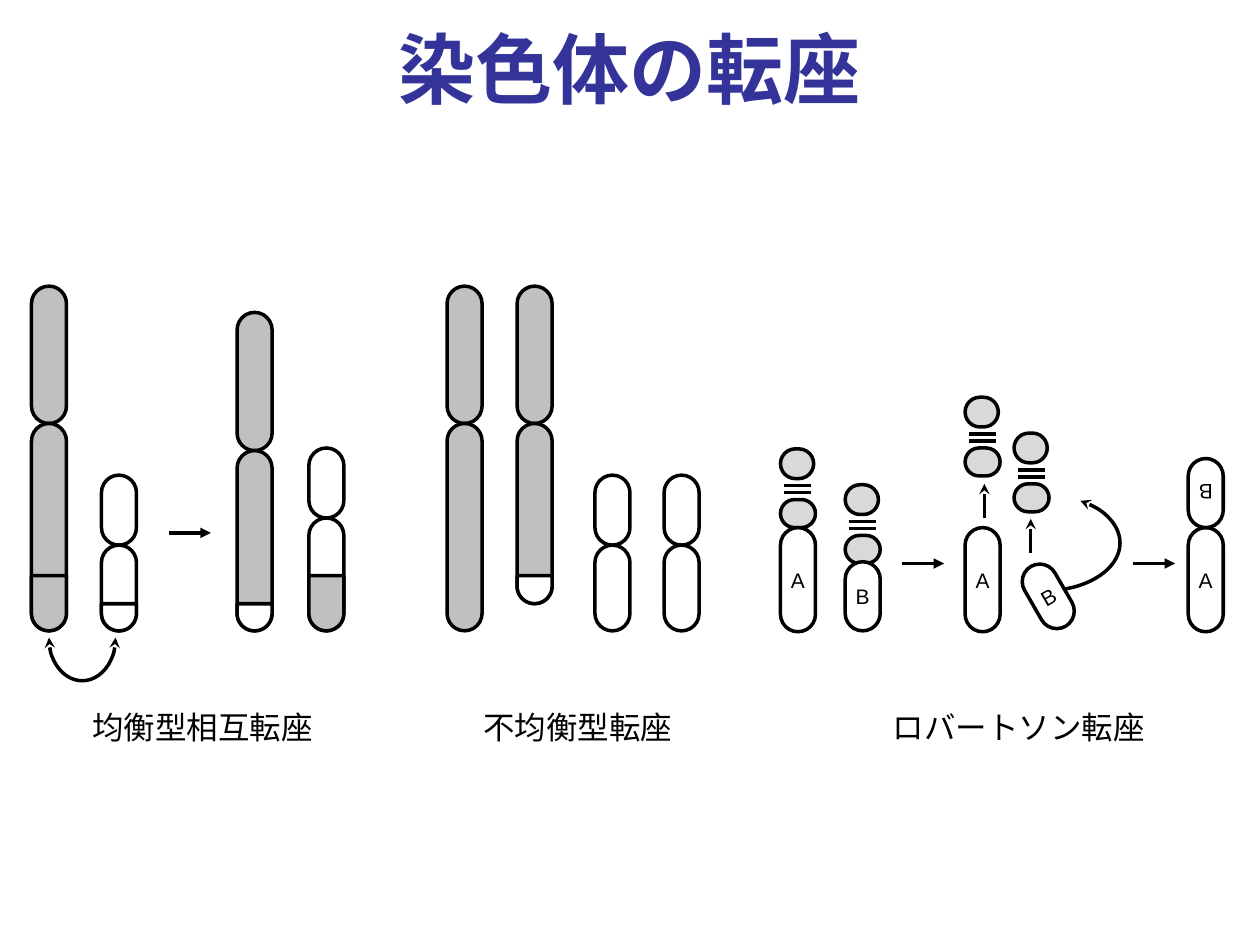
"""Build a slide that explains three kinds of chromosome translocation."""
from math import cos, pi, sin

from lxml import etree
from pptx import Presentation
from pptx.dml.color import RGBColor
from pptx.enum.shapes import MSO_CONNECTOR, MSO_SHAPE
from pptx.enum.text import MSO_ANCHOR, PP_ALIGN
from pptx.oxml.ns import qn
from pptx.util import Pt

STRAIGHT = MSO_CONNECTOR.STRAIGHT
PILL, ARC = MSO_SHAPE.ROUNDED_RECTANGLE, MSO_SHAPE.ARC
MIDDLE, CENTER = MSO_ANCHOR.MIDDLE, PP_ALIGN.CENTER

COLORS = {"title": "333399", "ink": "000000", "gray": "C0C0C0",
          "light": "D9D9D9", "white": "FFFFFF"}
JAPANESE, LATIN = "Noto Sans CJK JP", "Arial"
WIDTH = 20
BASE = 360.5
CUT = 329
TIP_CUT = 345


class Diagram:
    """Draw the elements of the slide in one style, with lengths in points."""

    def __init__(self, slide):
        self.slide = slide
        self.shapes = slide.shapes

    def color(self, name):
        return RGBColor.from_string(COLORS[name])

    def text(self, tf, text, size, font, color="ink", bold=False):
        tf.vertical_anchor = MIDDLE
        p = tf.paragraphs[0]
        p.text = text
        p.alignment = CENTER
        p.font.size = Pt(size)
        p.font.bold = bold
        p.font.name = font
        p.font.color.rgb = self.color(color)
        ea = etree.SubElement(p.font._element, qn("a:ea"))
        ea.set("typeface", font)
        return p

    def title(self, text):
        s = self.shapes.title
        s.left, s.top, s.width, s.height = Pt(36), Pt(10), Pt(648), Pt(57)
        self.text(s.text_frame, text, 44, JAPANESE, "title", True)

    def caption(self, x, width, text):
        s = self.shapes.add_textbox(Pt(x), Pt(405), Pt(width), Pt(24.5))
        s.text_frame.word_wrap = True
        p = self.text(s.text_frame, text, 18, JAPANESE)
        p.line_spacing = 0.8

    def outline(self, s, fill=None):
        s.shadow.inherit = False
        s.line.color.rgb = self.color("ink")
        s.line.width = Pt(2)
        if fill:
            s.fill.solid()
            s.fill.fore_color.rgb = self.color(fill)
        else:
            s.fill.background()

    def pill(self, x, y, width, height, fill="white", label=None, rotation=0):
        s = self.shapes.add_shape(PILL, Pt(x), Pt(y), Pt(width), Pt(height))
        s.adjustments[0] = 0.5
        s.rotation = rotation
        self.outline(s, fill)
        if label:
            tf = s.text_frame
            tf.margin_left = tf.margin_right = 0
            tf.margin_top = tf.margin_bottom = 0
            tf.word_wrap = False
            self.text(tf, label, 12, LATIN)

    def cap(self, x, cut, bottom, fill):
        r = WIDTH / 2
        angles = [pi * i / 24 for i in range(25)]
        points = [(Pt(x + r + r * cos(a)), Pt(bottom - r + r * sin(a)))
                  for a in angles]
        fb = self.shapes.build_freeform(Pt(x), Pt(cut))
        fb.add_line_segments([(Pt(x + WIDTH), Pt(cut))] + points)
        self.outline(fb.convert_to_shape(), fill)

    def chromosome(self, x, top, centromere, bottom, fill, cut=None, cap=None):
        self.pill(x, top, WIDTH, centromere - top, fill)
        self.pill(x, centromere, WIDTH, bottom - centromere, fill)
        if cut:
            self.cap(x, cut, bottom, cap)

    def satellite(self, x, y):
        self.pill(x, y, 19, 17, "light")
        for dy in (21, 25):
            self.line(x + 2, y + dy, x + 17.5, y + dy)
        self.pill(x, y + 29, WIDTH, 16, "light")

    def arrowheads(self, s, **ends):
        ln = s.line._get_or_add_ln()
        for end, kind in ends.items():
            etree.SubElement(ln, qn(f"a:{end}")).set("type", kind)

    def line(self, x1, y1, x2, y2, head=None):
        s = self.shapes.add_connector(STRAIGHT, Pt(x1), Pt(y1), Pt(x2), Pt(y2))
        s.line.color.rgb = self.color("ink")
        s.line.width = Pt(2)
        etree.SubElement(s._element.spPr, qn("a:effectLst"))
        if head:
            self.arrowheads(s, tailEnd=head)

    def arc(self, x, y, width, height, start, end, **ends):
        s = self.shapes.add_shape(ARC, Pt(x), Pt(y), Pt(width), Pt(height))
        s.adjustments[0], s.adjustments[1] = start * 0.6, end * 0.6
        self.outline(s)
        self.arrowheads(s, **ends)


def main():
    prs = Presentation()
    prs.slide_width, prs.slide_height = Pt(720), Pt(540)
    d = Diagram(prs.slides.add_slide(prs.slide_layouts[5]))
    d.title("染色体の転座")

    for x, width, text in ((30, 171.5, "均衡型相互転座"),
                           (245, 170.5, "不均衡型転座"),
                           (498, 168.5, "ロバートソン転座")):
        d.caption(x, width, text)

    d.chromosome(18, 163.5, 242, BASE, "gray", CUT, "gray")
    d.chromosome(58, 271.5, 311.5, BASE, "white", TIP_CUT, "white")
    d.chromosome(135.5, 178.5, 257.5, BASE, "gray", TIP_CUT, "white")
    d.chromosome(176.5, 256, 296, BASE, "white", CUT, "gray")
    d.arc(28, 341, 38, 48, 358, 182, headEnd="stealth", tailEnd="stealth")

    d.chromosome(255.5, 163.5, 242, BASE, "gray")
    d.chromosome(295.5, 163.5, 242, 345, "gray", CUT, "white")
    for x in (340, 379.5):
        d.chromosome(x, 271.5, 311.5, BASE, "white")

    for x, y in ((446, 256.5), (483, 277), (551.5, 227), (579.5, 247.5)):
        d.satellite(x, y)
    for x in (446, 551.5, 679):
        d.pill(x, 301.5, WIDTH, 59.5, label="A")
    for x, y, rotation in ((483, 321, 0), (589, 321, -30), (679, 262, 180)):
        d.pill(x, y, WIDTH, 39.5, label="B", rotation=rotation)

    for x, y in ((562.5, 296), (589, 316)):
        d.line(x, y, x, y - 19.5, "stealth")
    for x, y in ((96.5, 304.5), (515.5, 322), (647.5, 322)):
        d.line(x, y, x + 24, y, "triangle")
    d.arc(555, 283, 85, 54.5, 309.5, 69.5, headEnd="stealth")

    prs.save("out.pptx")


if __name__ == "__main__":
    main()
